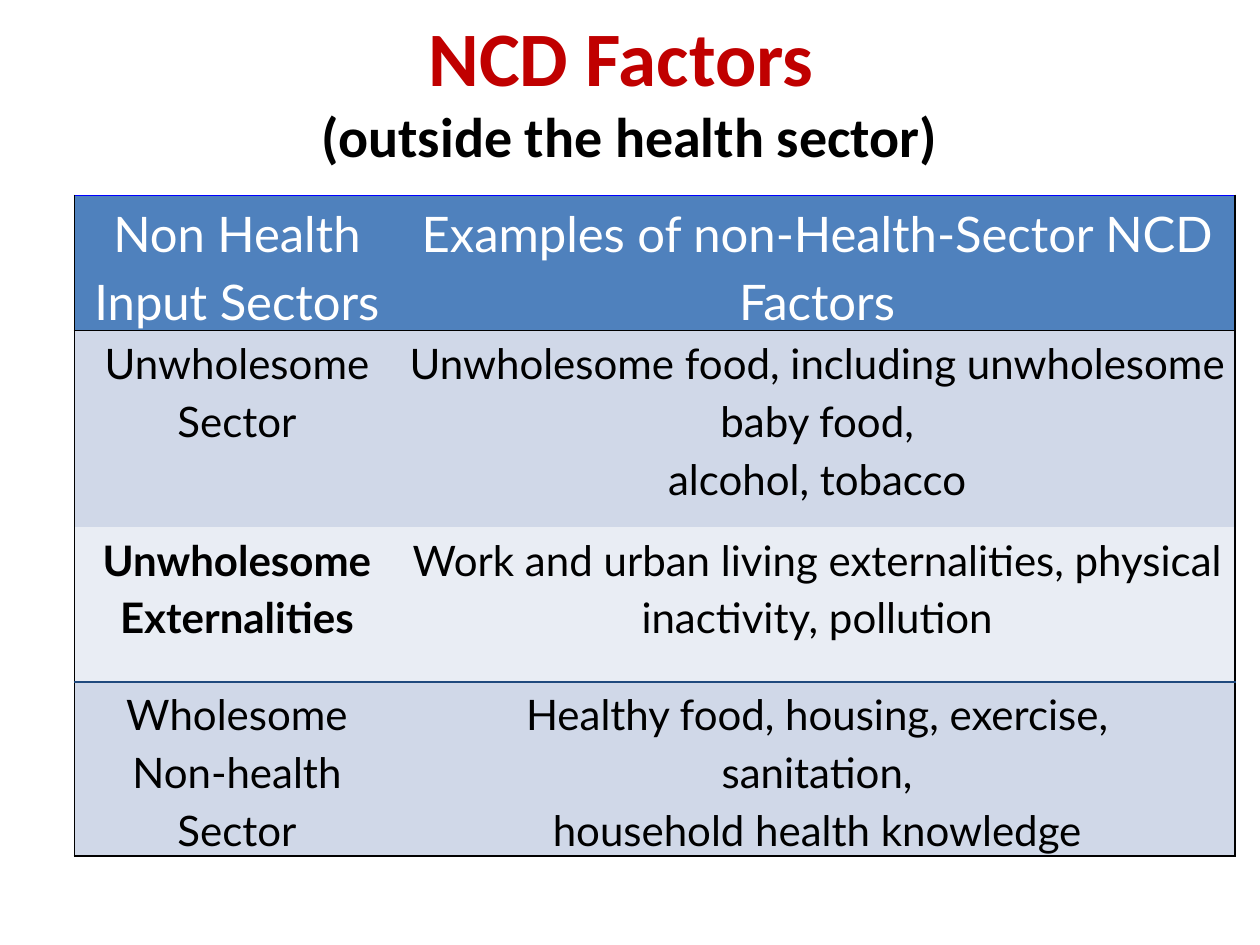
import pptx
import pptx.dml.color
import pptx.enum.text
import pptx.oxml.ns
import pptx.util
import lxml.etree

RGBColor = pptx.dml.color.RGBColor
BLACK = RGBColor(0x00, 0x00, 0x00)
WHITE = RGBColor(0xFF, 0xFF, 0xFF)
RED = RGBColor(0xC0, 0x00, 0x00)
BLUE = RGBColor(0x00, 0x00, 0xFF)
NAVY = RGBColor(0x1F, 0x49, 0x7D)
HEADER_FILL = RGBColor(0x4F, 0x81, 0xBD)
DARK_BAND = RGBColor(0xD0, 0xD8, 0xE8)
LIGHT_BAND = RGBColor(0xE9, 0xED, 0xF4)

SLIDE_WIDTH = pptx.util.Inches(10)
SLIDE_HEIGHT = pptx.util.Inches(7.5)
COLUMN_WIDTHS = [2.58, 6.63]
ROW_HEIGHTS = [1.04, 1.56, 1.23, 1.04]
ROW_FILLS = [HEADER_FILL, DARK_BAND, LIGHT_BAND, DARK_BAND]
ROW_RULES = [BLUE, BLACK, None, NAVY, BLACK]
FACTORS = [
    ["Non Health Input Sectors", "Examples of non-Health-Sector NCD Factors"],
    ["Unwholesome Sector",
     "Unwholesome food, including unwholesome baby food,\nalcohol, tobacco"],
    ["Unwholesome Externalities",
     "Work and urban living externalities, physical inactivity, pollution"],
    ["Wholesome Non-health Sector",
     "Healthy food, housing, exercise,\nsanitation,\nhousehold health knowledge"],
]
BOLD_CELL = (2, 0)


def style_span(span, font, size, color, bold):
    span.font.name = font
    span.font.size = pptx.util.Pt(size)
    span.font.color.rgb = color
    span.font.bold = bold


def add_title(page):
    box = page.shapes.add_textbox(0, 0, SLIDE_WIDTH, int(SLIDE_HEIGHT * 0.188))
    frame = box.text_frame
    frame.word_wrap = True
    frame.vertical_anchor = pptx.enum.text.MSO_ANCHOR.MIDDLE
    para = frame.paragraphs[0]
    para.text = "NCD Factors \v(outside the health sector)"
    para.alignment = pptx.enum.text.PP_ALIGN.CENTER
    heading, subtitle = para.runs
    style_span(heading, "Calibri", 44, RED, True)
    style_span(subtitle, "Calibri", 32, BLACK, True)


def add_border(cell, side, color):
    qn = pptx.oxml.ns.qn
    properties = cell._tc.get_or_add_tcPr()
    line = lxml.etree.SubElement(properties, qn("a:ln" + side), w=str(pptx.util.Pt(1)))
    if color is None:
        lxml.etree.SubElement(line, qn("a:noFill"))
    else:
        fill = lxml.etree.SubElement(line, qn("a:solidFill"))
        lxml.etree.SubElement(fill, qn("a:srgbClr"), val=str(color))


def style_cell(cell, row, column):
    last_column = len(COLUMN_WIDTHS) - 1
    add_border(cell, "L", BLACK if column == 0 else None)
    add_border(cell, "R", BLACK if column == last_column else None)
    add_border(cell, "T", ROW_RULES[row])
    add_border(cell, "B", ROW_RULES[row + 1])
    cell.fill.solid()
    cell.fill.fore_color.rgb = ROW_FILLS[row]
    cell.margin_left = cell.margin_right = pptx.util.Inches(0.07)
    cell.margin_top = cell.margin_bottom = 0


def fill_cell(cell, row, column):
    size, color = (28, WHITE) if row == 0 else (24, BLACK)
    cell.text_frame.text = FACTORS[row][column]
    for para in cell.text_frame.paragraphs:
        para.alignment = pptx.enum.text.PP_ALIGN.CENTER
        para.line_spacing = 1.15
        for span in para.runs:
            style_span(span, "Lato", size, color, (row, column) == BOLD_CELL)


def add_factor_table(page):
    inches = pptx.util.Inches
    table = page.shapes.add_table(
        len(ROW_HEIGHTS), len(COLUMN_WIDTHS), inches(0.59), inches(1.55),
        inches(sum(COLUMN_WIDTHS)), inches(sum(ROW_HEIGHTS))).table
    for column, width in enumerate(COLUMN_WIDTHS):
        table.columns[column].width = inches(width)
    for row, height in enumerate(ROW_HEIGHTS):
        table.rows[row].height = inches(height)
        for column in range(len(COLUMN_WIDTHS)):
            cell = table.cell(row, column)
            style_cell(cell, row, column)
            fill_cell(cell, row, column)


def main():
    deck = pptx.Presentation()
    deck.slide_width = SLIDE_WIDTH
    deck.slide_height = SLIDE_HEIGHT
    page = deck.slides.add_slide(deck.slide_layouts[6])
    add_title(page)
    add_factor_table(page)
    deck.save("out.pptx")


if __name__ == "__main__":
    main()
